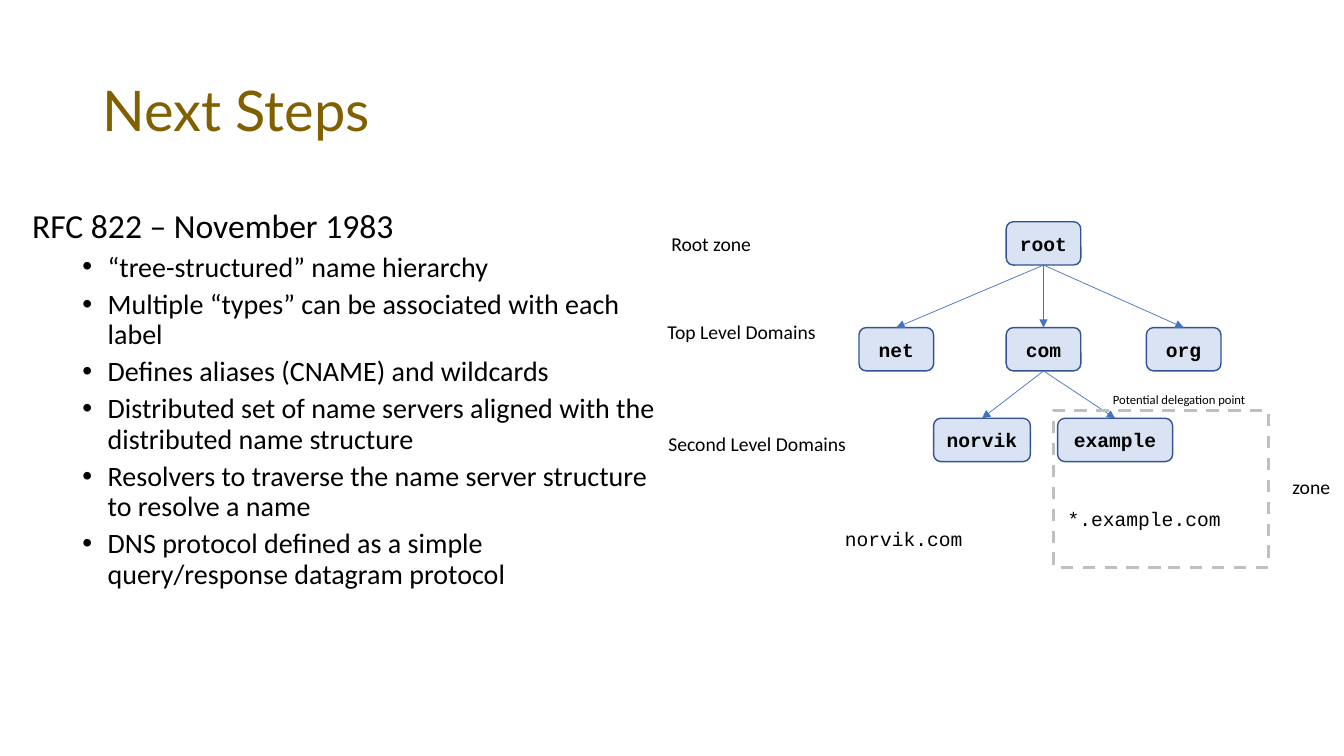
from dataclasses import dataclass

from lxml.etree import SubElement
from pptx import Presentation
from pptx.dml.color import RGBColor
from pptx.enum.dml import MSO_LINE_DASH_STYLE as Dash
from pptx.enum.shapes import MSO_CONNECTOR as Connector, MSO_SHAPE as Shape
from pptx.enum.text import MSO_ANCHOR as Anchor, PP_ALIGN as Align
from pptx.oxml.ns import qn
from pptx.util import Inches, Pt


@dataclass(frozen=True)
class Theme:
    title_color: str = "806000"
    text_color: str = "000000"
    node_fill: str = "DAE3F3"
    node_line: str = "325491"
    arrow: str = "4472C4"
    zone_line: str = "BFBFBF"
    title_font: str = "Lato"
    body_font: str = "Calibri"
    code_font: str = "Courier New"
    title_size: int = 40
    heading_size: int = 24
    bullet_size: int = 20
    label_size: int = 14
    note_size: int = 9


THEME = Theme()
HEADING = "RFC 822 – November 1983"
BULLETS = [
    "“tree-structured” name hierarchy",
    "Multiple “types” can be associated with each label",
    "Defines aliases (CNAME) and wildcards",
    "Distributed set of name servers aligned with the distributed name structure",
    "Resolvers to traverse the name server structure to resolve a name",
    "DNS protocol defined as a simple query/response datagram protocol",
]

# Tree positions are offsets from the diagram box
NODE_HEIGHT = 0.43
NODES = {  # name: left, top, width
    "root": (3.48, 0, 0.74),
    "net": (2.02, 1.05, 0.74),
    "com": (3.48, 1.05, 0.74),
    "org": (4.87, 1.05, 0.74),
    "norvik": (2.76, 1.95, 0.96),
    "example": (3.99, 1.95, 1.14),
}
CHILDREN = {"root": ["net", "com", "org"], "com": ["norvik", "example"]}
LABELS = [  # text, left, top, width, height, font, size
    ("Root zone", 0.06, 0.05, 1, 0.34, THEME.body_font, THEME.label_size),
    ("Top Level Domains", 0.02, 0.92, 1.69, 0.34, THEME.body_font, THEME.label_size),
    ("Second Level Domains", 0.03, 2.04, 1.98, 0.34, THEME.body_font, THEME.label_size),
    ("norvik.com", 1.78, 2.98, 1.38, 0.34, THEME.code_font, THEME.label_size),
    ("*.example.com", 3.99, 2.78, 1.73, 0.34, THEME.code_font, THEME.label_size),
    ("Potential delegation point", 4.44, 1.64, 1.54, 0.25, THEME.body_font, THEME.note_size),
    ("zone", 6.22, 2.46, 0.58, 0.34, THEME.body_font, THEME.label_size),
]
ZONE = (3.95, 1.87, 2.13, 1.56)


def write(paragraph, text, font, size, color=THEME.text_color, bold=False, **layout):
    run = paragraph.add_run()
    run.text = text
    for name, value in {"name": font, "size": Pt(size), "bold": bold}.items():
        setattr(run.font, name, value)
    run.font.color.rgb = RGBColor.from_string(color)
    for name, value in layout.items():
        setattr(paragraph, name, value)


def add_text_frame(slide, box, wrap=True, anchor=Anchor.TOP):
    frame = slide.shapes.add_textbox(*map(Inches, box)).text_frame
    frame.word_wrap = wrap
    frame.vertical_anchor = anchor
    return frame


def add_box(slide, kind, box, line_color, line_width):
    shape = slide.shapes.add_shape(kind, *map(Inches, box))
    shape.shadow.inherit = False
    shape.line.color.rgb = RGBColor.from_string(line_color)
    shape.line.width = Pt(line_width)
    return shape


def add_bullet(paragraph):
    properties = paragraph._p.get_or_add_pPr()
    for name, value in {"marL": 0.75, "indent": -0.25, "lvl": None}.items():
        properties.set(name, "1" if value is None else str(Inches(value)))
    SubElement(properties, qn("a:buFont")).set("typeface", "Arial")
    SubElement(properties, qn("a:buChar")).set("char", "•")


def add_arrow(slide, parent, child):
    arrow = slide.shapes.add_connector(Connector.STRAIGHT, 0, 0, 0, 0)
    arrow.begin_connect(parent, 2)  # bottom centre
    arrow.end_connect(child, 0)  # top centre
    arrow.line.color.rgb = RGBColor.from_string(THEME.arrow)
    arrow.line.width = Pt(0.5)
    SubElement(arrow.line._get_or_add_ln(), qn("a:tailEnd")).set("type", "triangle")
    SubElement(arrow._element.spPr, qn("a:effectLst"))


def add_title(slide, box):
    frame = add_text_frame(slide, box, anchor=Anchor.MIDDLE)
    write(frame.paragraphs[0], "Next Steps", THEME.title_font, THEME.title_size,
          THEME.title_color, line_spacing=0.9)


def add_body(slide, box):
    frame = add_text_frame(slide, box)
    write(frame.paragraphs[0], HEADING, THEME.body_font, THEME.heading_size,
          line_spacing=0.9, space_before=Pt(10))
    for text in BULLETS:
        paragraph = frame.add_paragraph()
        write(paragraph, text, THEME.body_font, THEME.bullet_size,
              line_spacing=0.9, space_before=Pt(5))
        add_bullet(paragraph)


def add_domain_tree(slide, left, top):
    def place(x, y, width, height):
        return left + x, top + y, width, height

    # Domain nodes
    nodes = {}
    for name, position in NODES.items():
        node = add_box(slide, Shape.ROUNDED_RECTANGLE, place(*position, NODE_HEIGHT),
                       THEME.node_line, 1)
        node.fill.solid()
        node.fill.fore_color.rgb = RGBColor.from_string(THEME.node_fill)
        node.text_frame.vertical_anchor = Anchor.MIDDLE
        write(node.text_frame.paragraphs[0], name, THEME.code_font, THEME.label_size,
              bold=True, alignment=Align.CENTER)
        nodes[name] = node

    # Arrows from each parent to its children
    for parent, children in CHILDREN.items():
        for child in children:
            add_arrow(slide, nodes[parent], nodes[child])

    # Level names, domain names and notes
    for text, x, y, width, height, font, size in LABELS:
        frame = add_text_frame(slide, place(x, y, width, height), wrap=False)
        write(frame.paragraphs[0], text, font, size)

    # Zone boundary
    zone = add_box(slide, Shape.RECTANGLE, place(*ZONE), THEME.zone_line, 2.25)
    zone.fill.background()
    zone.line.dash_style = Dash.DASH


def main():
    presentation = Presentation()
    presentation.slide_width = Inches(13.33)
    presentation.slide_height = Inches(7.5)
    slide = presentation.slides.add_slide(presentation.slide_layouts[6])
    add_title(slide, (0.92, 0.4, 11.5, 1.45))
    add_body(slide, (0.22, 2.03, 6.46, 4.76))
    add_domain_tree(slide, 6.5, 2.2)
    presentation.save("out.pptx")


if __name__ == "__main__":
    main()
